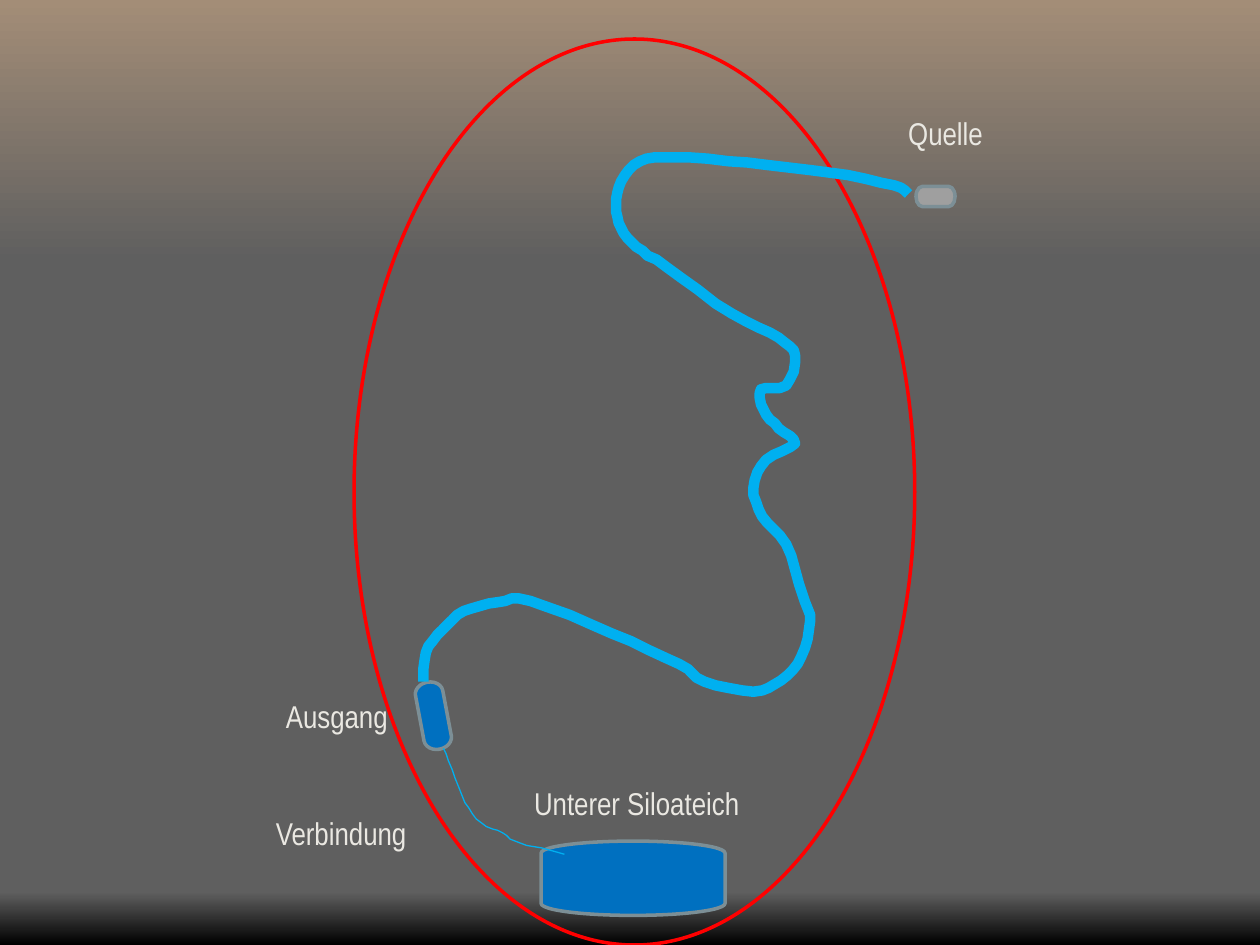
from pptx import Presentation
from pptx import util as u
from pptx.dml.color import RGBColor
from pptx.enum import shapes, text

PX = 9144  # EMU per px, 100 px to the inch
CURVE_STEPS = 4

SAND = RGBColor(0xA3, 0x8D, 0x77)
SLATE = RGBColor(0x5F, 0x5F, 0x5F)
BLACK = RGBColor(0x00, 0x00, 0x00)
SPRING_GREY = RGBColor(0x9F, 0x9F, 0x9F)
OUTLINE = RGBColor(0x7C, 0x8F, 0x96)
WATER = RGBColor(0x00, 0x70, 0xC0)
STREAM = RGBColor(0x00, 0xB0, 0xF0)
RED = RGBColor(0xFF, 0x00, 0x00)
LABEL = RGBColor(0xEA, 0xE8, 0xE2)

presentation = Presentation()
presentation.slide_width = 1000 * PX
presentation.slide_height = 750 * PX
slide = presentation.slides.add_slide(presentation.slide_layouts[6])
slide.background.fill.solid()
slide.background.fill.fore_color.rgb = SLATE


def add_outline(kind, box, color, fill=None, rotation=0):
    shape = slide.shapes.add_shape(kind, *(v * PX for v in box))
    shape.rotation = rotation
    shape.shadow.inherit = False
    if fill is None:
        shape.fill.background()
    else:
        shape.fill.solid()
        shape.fill.fore_color.rgb = fill
    shape.line.color.rgb = color
    shape.line.width = u.Pt(2)


def add_course(bends, width):
    """Draw a smooth open line (Catmull-Rom) through the bends."""
    padded = [bends[0], *bends, bends[-1]]
    points = []
    for a, b, c, d in zip(padded, padded[1:], padded[2:], padded[3:]):
        for step in range(1, CURVE_STEPS + 1):
            t = step / CURVE_STEPS
            points.append([
                (2 * q + (r - p) * t + (2 * p - 5 * q + 4 * r - s) * t ** 2
                 + (3 * q - p - 3 * r + s) * t ** 3) / 2
                for p, q, r, s in zip(a, b, c, d)])
    builder = slide.shapes.build_freeform(*bends[0], scale=PX)
    builder.add_line_segments(points, close=False)
    shape = builder.convert_to_shape()
    shape.shadow.inherit = False
    shape.fill.background()
    shape.line.color.rgb = STREAM
    shape.line.width = u.Pt(width)


# Gradient bands at the top and bottom edges
for top, height, colors in ((0, 208, (SAND, SLATE)), (708, 42, (SLATE, BLACK))):
    band = slide.shapes.add_shape(
        shapes.MSO_SHAPE.RECTANGLE, 0, top * PX, 1000 * PX, height * PX)
    band.shadow.inherit = False
    band.line.fill.background()
    band.fill.gradient()
    band.fill.gradient_angle = 270
    for stop, position, color in zip(band.fill.gradient_stops, (0, 1), colors):
        stop.position = position
        stop.color.rgb = color

# Spring, outlet, marked area and pond
TERMINATOR = shapes.MSO_SHAPE.FLOWCHART_TERMINATOR
add_outline(TERMINATOR, (727, 148, 31, 16), OUTLINE, SPRING_GREY)
add_outline(TERMINATOR, (317, 557, 54, 22), OUTLINE, WATER, 259.3)
add_outline(shapes.MSO_SHAPE.OVAL, (281, 31, 445, 719), RED)
add_outline(TERMINATOR, (473, 624, 59, 146), OUTLINE, WATER, 270)

# Thin connection from the outlet to the pond
add_course([(352, 594), (361, 617), (369, 637), (382, 653), (399, 661),
            (410, 668), (448, 678)], 0.75)

# Stream from the spring down to the outlet
add_course([
    # Upper bend
    (721, 154), (709, 147), (658, 137), (593, 129), (536, 125), (508, 128),
    (493, 144), (489, 163), (493, 181), (505, 196), (529, 212), (581, 249),
    # Narrow loops
    (618, 268), (631, 282), (624, 306), (604, 309), (606, 325), (618, 340),
    (631, 352), (608, 365), (598, 387), (605, 410), (624, 432),
    # Lower bend
    (637, 472), (643, 493), (636, 521), (620, 540), (598, 549), (559, 541),
    (539, 527), (486, 503), (421, 477), (395, 478), (368, 485), (351, 500),
    (338, 518), (336, 541)], 6)

# Labels
LABEL_FORMAT = {"name": "Arial Narrow", "size": u.Pt(18)}
for words, box, wrap in (
        ("Quelle", (711, 86, 90, 40), False),
        ("Ausgang", (217, 548, 141, 40), True),
        ("Unterer Siloateich", (414, 617, 185, 40), False),
        ("Verbindung", (209, 641, 158, 40), True)):
    label = slide.shapes.add_textbox(*(v * PX for v in box))
    frame = label.text_frame
    frame.word_wrap = wrap
    frame.auto_size = text.MSO_AUTO_SIZE.SHAPE_TO_FIT_TEXT
    run = frame.paragraphs[0].add_run()
    run.text = words
    for key, value in LABEL_FORMAT.items():
        setattr(run.font, key, value)
    run.font.color.rgb = LABEL

presentation.save("out.pptx")
